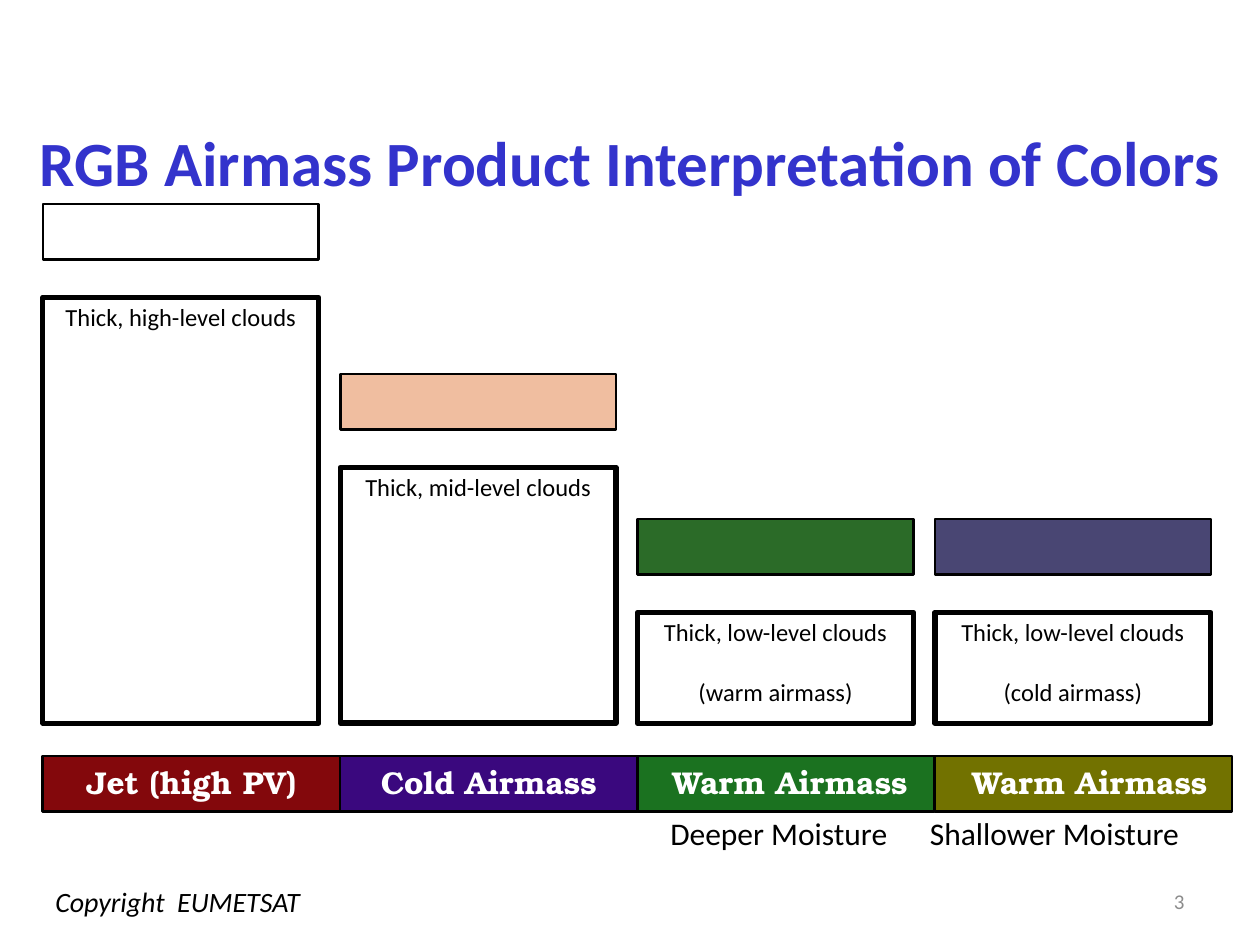
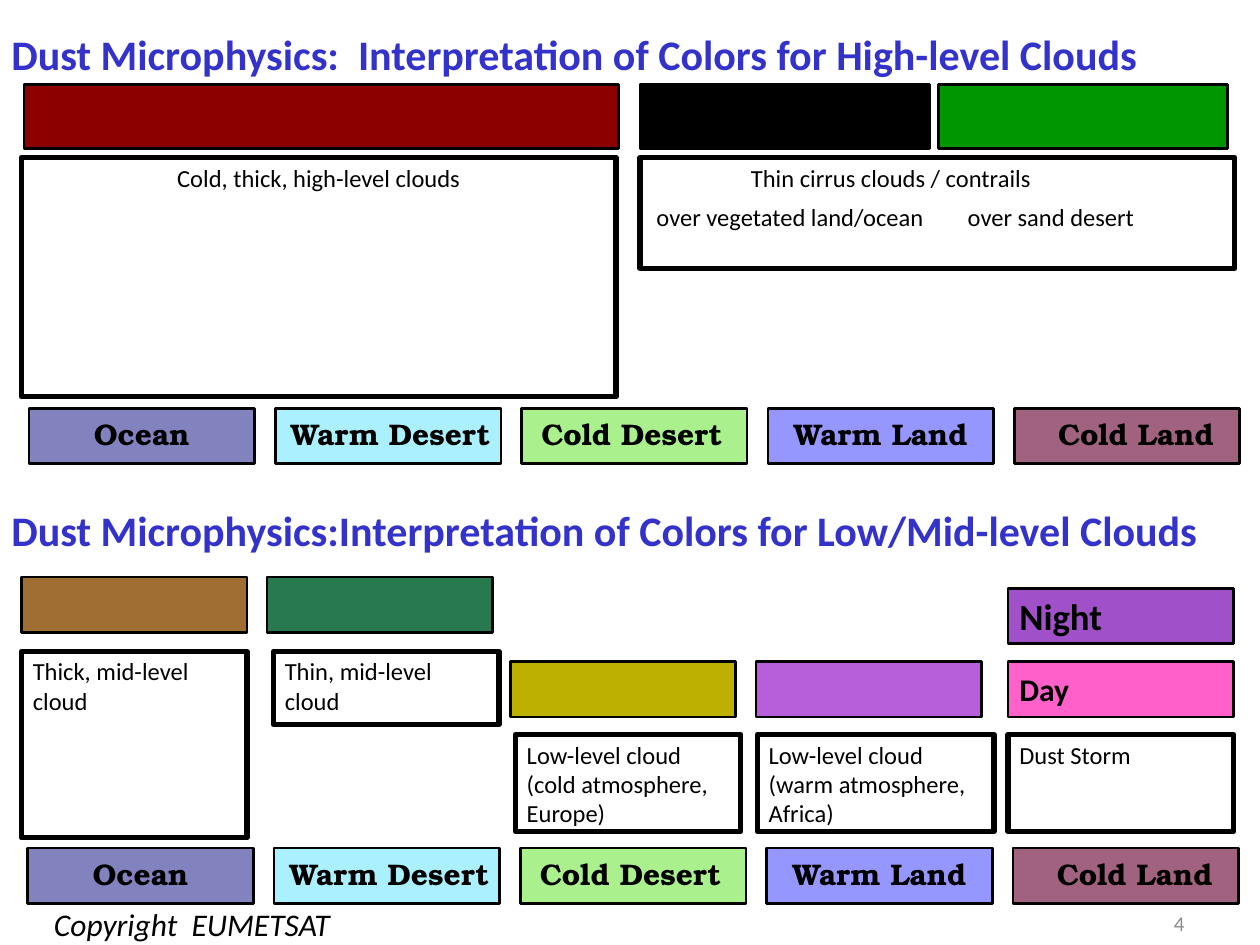
from lxml import etree
from pptx import Presentation
from pptx.dml.color import RGBColor as RGB
from pptx.enum.shapes import MSO_SHAPE as Preset
from pptx.enum.text import MSO_ANCHOR as Anchor, MSO_AUTO_SIZE as AutoSize, PP_ALIGN as Align
from pptx.oxml.ns import qn
from pptx.util import Inches, Pt

SLIDE_W, SLIDE_H = 10, 7.5
TITLE_BLUE = RGB(0x33, 0x33, 0xCC)
BLACK = RGB(0, 0, 0)
WHITE = RGB(0xFF, 0xFF, 0xFF)
GREY = RGB(0x8C, 0x8C, 0x8C)
SANS, SERIF = "Calibri", "TeX Gyre Bonum"
SWATCH_H = 0.44
COPYRIGHT = "Copyright  EUMETSAT"

# Airmass slide: four columns that step down to a common ground line
AIRMASS_TITLE = "RGB Airmass Product Interpretation of Colors"
AIRMASS_LEFT, AIRMASS_PITCH, AIRMASS_W = 0.34, 2.36, 2.19
GROUND, SWATCH_RISE = 5.74, 0.74
BAND_TOP = 6
# cloud text, box top, swatch colour, band label, band colour, label nudge
AIRMASSES = [
    (["Thick, high-level clouds"], 2.36, WHITE,
     "Jet (high PV)", RGB(0x83, 0x08, 0x0C), 0),
    (["Thick, mid-level clouds"], 3.71, RGB(0xF0, 0xBE, 0xA0),
     "Cold Airmass", RGB(0x3A, 0x08, 0x7E), 0),
    (["Thick, low-level clouds", "(warm airmass)"], 4.86, RGB(0x2B, 0x6B, 0x28),
     "Warm Airmass", RGB(0x1B, 0x72, 0x20), 0.03),
    (["Thick, low-level clouds", "(cold airmass)"], 4.86, RGB(0x49, 0x46, 0x73),
     "Warm Airmass", RGB(0x72, 0x72, 0x00), 0.05),
]
MOISTURE = [("Deeper Moisture", 5.23), ("Shallower Moisture", 7.29)]

# Dust slide: high clouds above, low and mid clouds below
DUST_HIGH_TITLE = "Dust Microphysics:  Interpretation of Colors for High-level Clouds"
DUST_LOW_TITLE = "Dust Microphysics:Interpretation of Colors for Low/Mid-level Clouds"
SURFACE_W, SURFACE_PITCH = 1.79, 1.955
# label, colour, label nudge
SURFACES = [
    ("Ocean", RGB(0x82, 0x82, 0xBE), 0),
    ("Warm Desert", RGB(0xAA, 0xF0, 0xFF), 0.02),
    ("Cold Desert", RGB(0xAA, 0xF0, 0x8C), -0.02),
    ("Warm Land", RGB(0x96, 0x96, 0xFF), 0),
    ("Cold Land", RGB(0xA0, 0x62, 0x7E), 0.07),
]
SURFACE_ROWS = [(0.23, 3.24), (0.22, 6.73)]
HIGH_TOP, HIGH_H = 0.67, 0.51
# left, width, colour
HIGH_SWATCHES = [
    (0.19, 4.72, RGB(0x8C, 0x00, 0x00)),
    (5.08, 2.3, BLACK),
    (7.45, 2.29, RGB(0x00, 0x96, 0x00)),
]
HIGH_BOX_TOP, HIGH_BOX_W = 1.25, 4.72
# left, top, colour
LOW_SWATCHES = [
    (0.17, 4.58, RGB(0xA0, 0x6E, 0x32)),
    (2.12, 4.58, RGB(0x28, 0x79, 0x50)),
    (4.05, 5.25, RGB(0xBD, 0xB0, 0x01)),
    (6, 5.25, RGB(0xB7, 0x5F, 0xDA)),
]
# left, top, width, height, lines
LOW_BOXES = [
    (0.17, 5.17, 1.79, 1.48, ["Thick, mid-level cloud"]),
    (2.17, 5.17, 1.79, 0.58, ["Thin, mid-level cloud"]),
    (4.09, 5.83, 1.79, 0.77, ["Low-level cloud", "(cold atmosphere, Europe)"]),
    (6.01, 5.83, 1.88, 0.77, ["Low-level cloud", "(warm atmosphere, Africa)"]),
    (8, 5.83, 1.79, 0.77, ["Dust Storm"]),
]
DUST_LEFT = 8
# label, top, text size, colour
DUST_SWATCHES = [
    ("Night", 4.67, 21, RGB(0xA0, 0x50, 0xC8)),
    ("Day", 5.25, 18, RGB(0xFF, 0x60, 0xCA)),
]


def write(shape, lines, size, color=BLACK, font=SANS, bold=False, italic=False,
          align=Align.LEFT, anchor=Anchor.TOP, insets=(0.09, 0.04, 0.09, 0.04),
          gap=0, wrap=True):
    """Fill a shape with one paragraph per line; gap is the space between them."""
    frame = shape.text_frame
    frame.auto_size = AutoSize.NONE
    frame.word_wrap = wrap
    frame.vertical_anchor = anchor
    (frame.margin_left, frame.margin_top,
     frame.margin_right, frame.margin_bottom) = map(Inches, insets)
    for index, line in enumerate(lines):
        paragraph = frame.paragraphs[0] if index == 0 else frame.add_paragraph()
        paragraph.alignment = align
        paragraph.space_before = Pt(gap if index else 0)
        run = paragraph.add_run()
        run.text = line
        run.font.name, run.font.size = font, Pt(size)
        run.font.bold, run.font.italic = bold, italic
        run.font.color.rgb = color
    return shape


def add_text(slide, left, top, width, height, text, size, **style):
    box = slide.shapes.add_textbox(*map(Inches, (left, top, width, height)))
    return write(box, [text], size, **style)


def add_rectangle(slide, left, top, width, height, fill=None, line_width=1.5):
    shape = slide.shapes.add_shape(
        Preset.RECTANGLE, *map(Inches, (left, top, width, height)))
    shape.shadow.inherit = False
    if fill is None:
        shape.fill.background()
    else:
        shape.fill.solid()
        shape.fill.fore_color.rgb = fill
    shape.line.color.rgb = BLACK
    shape.line.width = Pt(line_width)
    return shape


def add_cloud_box(slide, left, top, width, height, lines, **style):
    shape = add_rectangle(slide, left, top, width, height, line_width=3)
    return write(shape, lines, 14, **style)


def add_band(slide, left, top, width, label, fill, nudge, size, color):
    """Draw a swatch with a serif label, its centre moved sideways by nudge."""
    shape = add_rectangle(slide, left, top, width, SWATCH_H, fill)
    insets = (max(2 * nudge, 0), 0.06, max(-2 * nudge, 0), 0)
    write(shape, [label], size, color=color, font=SERIF, bold=True,
          align=Align.CENTER, insets=insets)


def style_title(shape, text, top, height, size, align=Align.LEFT):
    shape.left, shape.top = 0, Inches(top)
    shape.width, shape.height = Inches(SLIDE_W), Inches(height)
    write(shape, [text], size, color=TITLE_BLUE, bold=True, align=align,
          anchor=Anchor.MIDDLE, insets=(0.09, 0.05, 0.09, 0.05))


def add_footer(slide, number, left, top, height, size):
    """Put the copyright line and the page number on one common line."""
    shared = dict(anchor=Anchor.MIDDLE, insets=(0.1, 0, 0.1, 0))
    add_text(slide, left, top, 2.78, height, COPYRIGHT, size, italic=True,
             wrap=False, **shared)
    add_text(slide, 7.17, top, 2.33, height, number, 12, color=GREY,
             align=Align.RIGHT, **shared)


def add_tab_stop(paragraph, position):
    tabs = etree.SubElement(paragraph._p.get_or_add_pPr(), qn("a:tabLst"))
    etree.SubElement(tabs, qn("a:tab"), pos=str(Inches(position)), algn="l")


def build_airmass(slide):
    style_title(slide.shapes.title, AIRMASS_TITLE, 0.78, 1, 36, Align.CENTER)
    for column, (lines, top, swatch, label, band, nudge) in enumerate(AIRMASSES):
        left = AIRMASS_LEFT + column * AIRMASS_PITCH
        add_rectangle(slide, left, top - SWATCH_RISE, AIRMASS_W, SWATCH_H, swatch)
        add_cloud_box(slide, left, top, AIRMASS_W, GROUND - top, lines,
                      align=Align.CENTER, gap=17)
        add_band(slide, left, BAND_TOP, AIRMASS_PITCH, label, band, nudge, 18, WHITE)
    for text, left in MOISTURE:
        add_text(slide, left, 6.42, 2.3, 0.39, text, 18)
    add_footer(slide, "3", 0.34, 6.96, 0.38, 16)


def build_dust(slide):
    style_title(slide.shapes.title, DUST_HIGH_TITLE, 0, 0.86, 24)
    style_title(slide.shapes.add_textbox(0, 0, 0, 0), DUST_LOW_TITLE, 3.83, 0.75, 24)

    for left, width, color in HIGH_SWATCHES:
        add_rectangle(slide, left, HIGH_TOP, width, HIGH_H, color)
    add_cloud_box(slide, 0.17, HIGH_BOX_TOP, HIGH_BOX_W, 1.9,
                  ["Cold, thick, high-level clouds"], align=Align.CENTER)
    cirrus = add_cloud_box(
        slide, 5.08, HIGH_BOX_TOP, HIGH_BOX_W, 0.88,
        ["\tThin cirrus clouds / contrails",
         "over vegetated land/ocean\tover sand desert"],
        gap=5.6, insets=(0.13, 0.04, 0.09, 0.04))
    for paragraph, position in zip(cirrus.text_frame.paragraphs, (0.75, 2.47)):
        add_tab_stop(paragraph, position)

    for left, top, color in LOW_SWATCHES:
        add_rectangle(slide, left, top, SURFACE_W, SWATCH_H, color)
    for left, top, width, height, lines in LOW_BOXES:
        add_cloud_box(slide, left, top, width, height, lines)
    for label, top, size, color in DUST_SWATCHES:
        swatch = add_rectangle(slide, DUST_LEFT, top, SURFACE_W, SWATCH_H, color)
        write(swatch, [label], size, bold=True, anchor=Anchor.MIDDLE)

    for first_left, top in SURFACE_ROWS:
        for column, (label, color, nudge) in enumerate(SURFACES):
            add_band(slide, first_left + column * SURFACE_PITCH, top, SURFACE_W,
                     label, color, nudge, 17, BLACK)
    add_footer(slide, "4", 0.33, 7.18, 0.3, 18)


def main():
    presentation = Presentation()
    presentation.slide_width, presentation.slide_height = Inches(SLIDE_W), Inches(SLIDE_H)
    title_only = presentation.slide_layouts.get_by_name("Title Only")
    for build in (build_airmass, build_dust):
        build(presentation.slides.add_slide(title_only))
    presentation.save("out.pptx")


if __name__ == "__main__":
    main()
